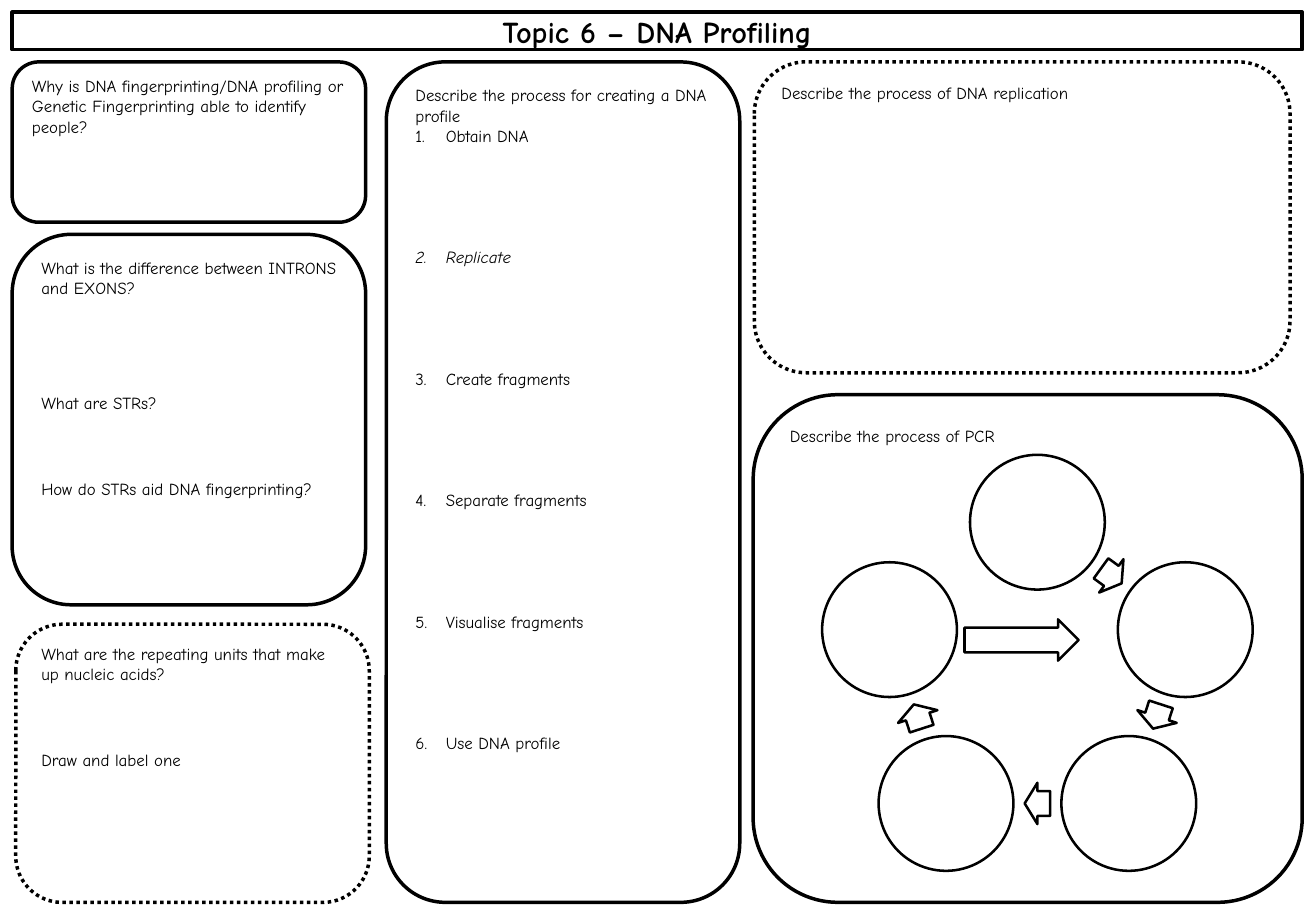
"""Build a one-page DNA profiling revision sheet."""
from dataclasses import dataclass
from math import cos, radians, sin

from lxml import etree
from pptx import Presentation
from pptx.dml.color import RGBColor
from pptx.enum.dml import MSO_LINE
from pptx.enum.shapes import MSO_SHAPE
from pptx.enum.text import MSO_ANCHOR, MSO_AUTO_SIZE, PP_ALIGN
from pptx.oxml.ns import qn
from pptx.shapes.autoshape import Shape
from pptx.shapes.shapetree import GroupShapes, SlideShapes
from pptx.slide import Slide
from pptx.text.text import _Paragraph
from pptx.util import Inches, Pt

ROUNDED, CIRCLE, ARROW = MSO_SHAPE.ROUNDED_RECTANGLE, MSO_SHAPE.OVAL, MSO_SHAPE.RIGHT_ARROW
DOTTED = MSO_LINE.ROUND_DOT
TOP, MIDDLE = MSO_ANCHOR.TOP, MSO_ANCHOR.MIDDLE
LEFT, CENTER = PP_ALIGN.LEFT, PP_ALIGN.CENTER
NO_AUTOFIT = MSO_AUTO_SIZE.NONE


@dataclass(frozen=True)
class Theme:
    """Colours, font and sizes of the sheet."""
    ink: RGBColor = RGBColor(0, 0, 0)
    paper: RGBColor = RGBColor(255, 255, 255)
    font: str = "Comic Neue"
    title_size: float = 18
    prompt_size: float = 10
    frame_weight: float = 2.08
    cycle_weight: float = 1.5


@dataclass(frozen=True)
class Box:
    """Position and size in inches."""
    left: float
    top: float
    width: float
    height: float


@dataclass(frozen=True)
class Prompt:
    """A question and the writing space above it in points."""
    text: str
    space_above: float = 0
    italic: bool = False


@dataclass(frozen=True)
class Panel:
    """A rounded frame with its prompts."""
    box: Box
    prompts: tuple[Prompt, ...] = ()
    dotted: bool = False


THEME = Theme()
SHEET_WIDTH, SHEET_HEIGHT = 65 / 6, 7.6
TITLE_BOX = Box(0.1, 0.1, 10.62, 0.31)
PROCESS_FRAME = Panel(Box(3.18, 0.51, 2.91, 6.92))
PROCESS_BOX = Box(3.42, 0.7, 2.43, 6.54)
PROCESS_INTRO = Prompt("Describe the process for creating a DNA profile")
STEP_SPACE = 60
PROCESS_STEPS = (
    Prompt("Obtain DNA"),
    Prompt("Replicate", STEP_SPACE, italic=True),
    Prompt("Create fragments", STEP_SPACE),
    Prompt("Separate fragments", STEP_SPACE),
    Prompt("Visualise fragments", STEP_SPACE),
    Prompt("Use DNA profile", STEP_SPACE),
)
PANELS = (
    Panel(Box(6.2, 3.25, 4.52, 4.18), (Prompt("Describe the process of PCR"),)),
    Panel(Box(0.1, 0.51, 2.91, 1.32), (
        Prompt("Why is DNA fingerprinting/DNA profiling or Genetic Fingerprinting "
               "able to identify people?"),)),
    PROCESS_FRAME,
    Panel(Box(0.1, 1.93, 2.91, 3.05), (
        Prompt("What is the difference between INTRONS and EXONS?"),
        Prompt("What are STRs?", 56),
        Prompt("How do STRs aid DNA fingerprinting?", 39))),
    Panel(Box(0.13, 5.14, 2.91, 2.29), (
        Prompt("What are the repeating units that make up nucleic acids?"),
        Prompt("Draw and label one", 39)), dotted=True),
    Panel(Box(6.21, 0.51, 4.41, 2.56),
          (Prompt("Describe the process of DNA replication"),), dotted=True),
)
STAGES, CYCLE_X, CYCLE_Y, CYCLE_RADIUS = 5, 8.54, 5.58, 1.28
STAGE_SIZE, ARROW_LENGTH, ARROW_HEIGHT = 1.11, 0.21, 0.34
CROSS_ARROW = Box(7.94, 5.1, 0.94, 0.34)


def place(shape: Shape, box: Box) -> None:
    """Move a placeholder to a box."""
    shape.left, shape.top = Inches(box.left), Inches(box.top)
    shape.width, shape.height = Inches(box.width), Inches(box.height)


def outline(shape: Shape, weight: float) -> None:
    """Give a shape its ink line."""
    shape.line.color.rgb = THEME.ink
    shape.line.width = Pt(weight)


def draw(shapes: SlideShapes | GroupShapes, kind: MSO_SHAPE, box: Box, weight: float) -> Shape:
    """Draw a white outlined shape."""
    shape = shapes.add_shape(kind, Inches(box.left), Inches(box.top),
                             Inches(box.width), Inches(box.height))
    shape.shadow.inherit = False
    shape.fill.solid()
    shape.fill.fore_color.rgb = THEME.paper
    outline(shape, weight)
    return shape


def write(paragraph: _Paragraph, prompt: Prompt, size: float, bold: bool = False) -> None:
    """Write one prompt as a formatted run."""
    paragraph.alignment = LEFT
    paragraph.space_before = Pt(prompt.space_above)
    run = paragraph.add_run()
    run.text = prompt.text
    run.font.name = THEME.font
    run.font.size = Pt(size)
    run.font.bold = bold
    run.font.italic = prompt.italic
    run.font.color.rgb = THEME.ink


def write_prompts(shape: Shape, prompts: tuple[Prompt, ...]) -> None:
    """Fill a shape with prompts from its top."""
    frame = shape.text_frame
    frame.word_wrap = True
    frame.auto_size = NO_AUTOFIT
    frame.vertical_anchor = TOP
    for index, prompt in enumerate(prompts):
        paragraph = frame.add_paragraph() if index else frame.paragraphs[0]
        write(paragraph, prompt, THEME.prompt_size)


def set_bullet(paragraph: _Paragraph, numbered: bool) -> None:
    """Number a paragraph or remove its bullet."""
    properties = paragraph._p.get_or_add_pPr()
    indent = Inches(0.25) if numbered else 0
    properties.set("marL", str(indent))
    properties.set("indent", str(-indent))
    if numbered:
        font = etree.SubElement(properties, qn("a:buFont"))
        font.set("typeface", "+mj-lt")
        etree.SubElement(properties, qn("a:buAutoNum")).set("type", "arabicPeriod")
    else:
        etree.SubElement(properties, qn("a:buNone"))


def add_title(slide: Slide) -> None:
    """Write the framed title."""
    title = slide.shapes.title
    place(title, TITLE_BOX)
    outline(title, THEME.frame_weight)
    frame = title.text_frame
    frame.auto_size = NO_AUTOFIT
    frame.vertical_anchor = MIDDLE
    write(frame.paragraphs[0], Prompt("Topic 6 – DNA Profiling"), THEME.title_size, bold=True)
    frame.paragraphs[0].alignment = CENTER


def add_panel(slide: Slide, panel: Panel) -> None:
    """Draw a panel with its prompts."""
    shape = draw(slide.shapes, ROUNDED, panel.box, THEME.frame_weight)
    if panel.dotted:
        shape.line.dash_style = DOTTED
    write_prompts(shape, panel.prompts)


def add_process(slide: Slide) -> None:
    """Write the numbered process in front of its frame."""
    process = slide.placeholders[1]
    place(process, PROCESS_BOX)
    frame = process.text_frame
    frame.margin_left = frame.margin_right = frame.margin_top = frame.margin_bottom = 0
    write_prompts(process, (PROCESS_INTRO, *PROCESS_STEPS))
    for index, paragraph in enumerate(frame.paragraphs):
        set_bullet(paragraph, numbered=index > 0)
    process._element.getparent().append(process._element)


def add_arrow(shapes: GroupShapes, box: Box, rotation: float = 0) -> None:
    """Draw a block arrow of the cycle."""
    arrow = draw(shapes, ARROW, box, THEME.cycle_weight)
    arrow.adjustments[0], arrow.adjustments[1] = 0.6, 0.5
    arrow.rotation = rotation


def ring_box(angle: float, radius: float, width: float, height: float) -> Box:
    """Centre a box on a ring of the cycle."""
    return Box(CYCLE_X + radius * sin(radians(angle)) - width / 2,
               CYCLE_Y - radius * cos(radians(angle)) - height / 2, width, height)


def add_cycle(slide: Slide) -> None:
    """Draw the ring of PCR stages and arrows."""
    shapes = slide.shapes.add_group_shape().shapes
    turn = 360 / STAGES
    for stage in range(STAGES):
        angle = stage * turn
        draw(shapes, CIRCLE, ring_box(angle, CYCLE_RADIUS, STAGE_SIZE, STAGE_SIZE),
             THEME.cycle_weight)
        if stage < STAGES - 1:
            between = angle + turn / 2
            radius = CYCLE_RADIUS * cos(radians(turn / 2))
            add_arrow(shapes, ring_box(between, radius, ARROW_LENGTH, ARROW_HEIGHT), between)
    add_arrow(shapes, CROSS_ARROW)


def main() -> None:
    """Build and save the sheet."""
    deck = Presentation()
    deck.slide_width = Inches(SHEET_WIDTH)
    deck.slide_height = Inches(SHEET_HEIGHT)
    slide = deck.slides.add_slide(deck.slide_layouts[1])
    add_title(slide)
    for panel in PANELS:
        add_panel(slide, panel)
    add_process(slide)
    add_cycle(slide)
    deck.save("out.pptx")


if __name__ == "__main__":
    main()
